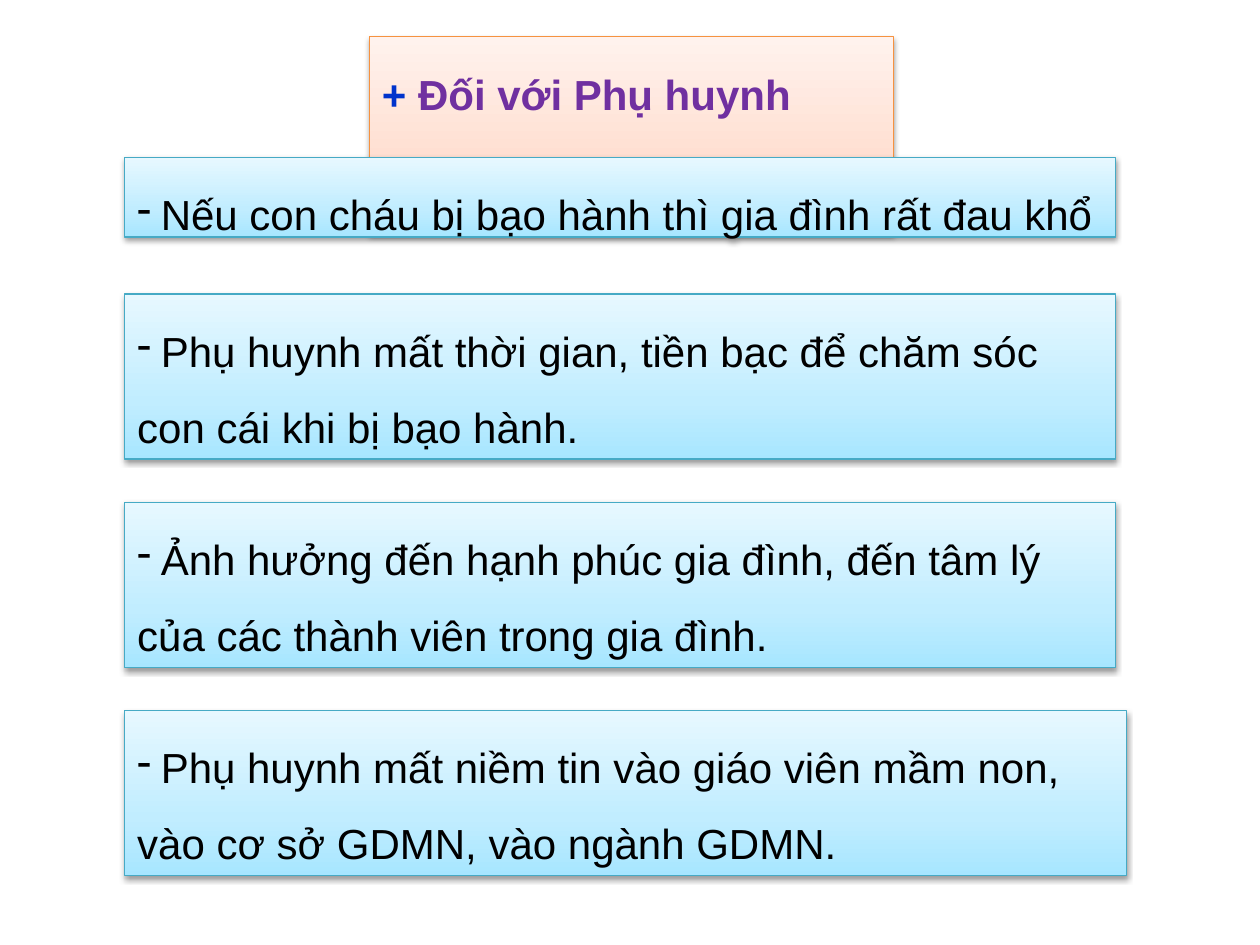
from copy import deepcopy
from dataclasses import dataclass

from lxml.etree import SubElement
from pptx import Presentation
from pptx.dml.color import RGBColor as Color
from pptx.enum.shapes import MSO_SHAPE as Preset
from pptx.enum.text import MSO_ANCHOR as Anchor, MSO_AUTO_SIZE as AutoSize, PP_ALIGN as Align
from pptx.oxml.ns import qn
from pptx.util import Pt


@dataclass(frozen=True)
class Theme:
    font: str = "Arial"
    size: float = 24
    text: str = "000000"
    plus: str = "0033CC"
    heading: str = "7030A0"
    blue: tuple = ("A7E6FF", "C1EDFF", "E7F8FF")
    blue_line: str = "46AAC5"
    orange: tuple = ("FFD2BD", "FFDED0", "FFF2ED")
    orange_line: str = "F69240"
    stops: tuple = (0, 0.35, 1)
    line_width: float = 0.75
    line_spacing: float = 1.5
    hanging: float = 13.5


def add_span(para, text, *, font, size, color, bold=False):
    span = para.add_run()
    span.text = text
    span.font.name = font
    span.font.size = Pt(size)
    span.font.bold = bold
    span.font.color.rgb = Color.from_string(color)


class SlideBuilder:
    def __init__(self, page, theme):
        self.page = page
        self.theme = theme

    def decorate(self, box, colors, line_color):
        box.fill.gradient()
        box.fill.gradient_angle = 90
        first = box._element.spPr.find(".//" + qn("a:gs"))
        first.addnext(deepcopy(first))
        for stop, position, color in zip(box.fill.gradient_stops, self.theme.stops, colors):
            stop.position = position
            stop.color.rgb = Color.from_string(color)
        box.line.color.rgb = Color.from_string(line_color)
        box.line.width = Pt(self.theme.line_width)
        box.shadow.inherit = False
        effects = box._element.spPr.find(qn("a:effectLst"))
        shadow = SubElement(effects, qn("a:outerShdw"), blurRad=str(Pt(3.15)),
                            dist=str(Pt(1.57)), dir="5400000", rotWithShape="0")
        black = SubElement(shadow, qn("a:srgbClr"), val="000000")
        SubElement(black, qn("a:alpha"), val="38000")

    def frame(self, box, wrap=True):
        frame = box.text_frame
        frame.word_wrap = wrap
        frame.auto_size = AutoSize.SHAPE_TO_FIT_TEXT
        frame.vertical_anchor = Anchor.TOP
        return frame

    def format_para(self, para):
        para.alignment = Align.JUSTIFY
        para.line_spacing = self.theme.line_spacing

    def add_bullet(self, para):
        properties = para._p.get_or_add_pPr()
        properties.set("marL", str(Pt(self.theme.hanging)))
        properties.set("indent", str(-Pt(self.theme.hanging)))
        SubElement(properties, qn("a:buChar"), char="-")

    def title(self, spans, left, top, width, height):
        box = self.page.shapes.title
        box.left, box.top, box.width, box.height = map(Pt, (left, top, width, height))
        self.decorate(box, self.theme.orange, self.theme.orange_line)
        para = self.frame(box).paragraphs[0]
        self.format_para(para)
        for text, color in spans:
            add_span(para, text, font=self.theme.font, size=self.theme.size,
                     color=color, bold=True)

    def card(self, lines, left, top, width, height, wrap=True):
        box = self.page.shapes.add_shape(Preset.RECTANGLE, *map(Pt, (left, top, width, height)))
        self.decorate(box, self.theme.blue, self.theme.blue_line)
        frame = self.frame(box, wrap)
        for index, text in enumerate(lines):
            para = frame.add_paragraph() if index else frame.paragraphs[0]
            if index == 0:
                self.add_bullet(para)
            self.format_para(para)
            add_span(para, text, font=self.theme.font, size=self.theme.size,
                     color=self.theme.text)


def main():
    deck = Presentation()
    deck.slide_width, deck.slide_height = Pt(720), Pt(540)
    theme = Theme()
    builder = SlideBuilder(deck.slides.add_slide(deck.slide_layouts[5]), theme)

    builder.title([("+ ", theme.plus), ("Đối với Phụ huynh", theme.heading)], 211, 21, 299.5, 51)

    left, width = 71.3, 566
    builder.card(["Nếu con cháu bị bạo hành thì gia đình rất đau khổ"],
                 left, 90, width, 45.4, wrap=False)

    cards = [
        (["Phụ huynh mất thời gian, tiền bạc để chăm sóc", "con cái khi bị bạo hành."], width),
        (["Ảnh hưởng đến hạnh phúc gia đình, đến tâm lý",
          "của các thành viên trong gia đình."], width),
        (["Phụ huynh mất niềm tin vào giáo viên mầm non,",
          "vào cơ sở GDMN, vào ngành GDMN."], 572.4),
    ]
    for index, (lines, card_width) in enumerate(cards):
        builder.card(lines, left, 168 + 119 * index, card_width, 94.3)

    deck.save("out.pptx")


if __name__ == "__main__":
    main()
